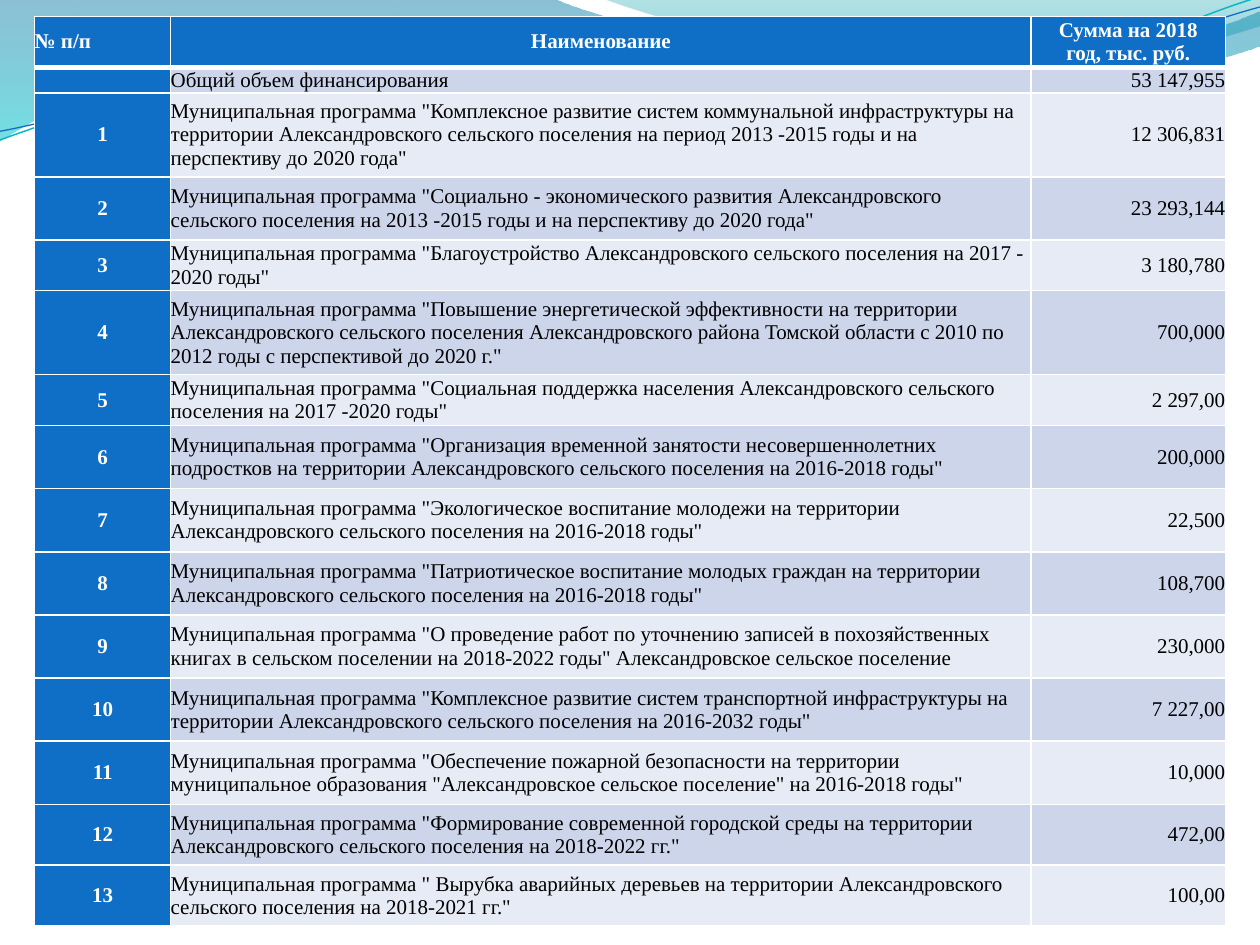
"""Build the slide with the table of municipal programme funding for 2018."""
from lxml import etree
from pptx import Presentation
from pptx.dml.color import RGBColor
from pptx.enum.text import MSO_ANCHOR, PP_ALIGN
from pptx.oxml.ns import qn
from pptx.util import Pt

LEFT, CENTER, RIGHT = PP_ALIGN.LEFT, PP_ALIGN.CENTER, PP_ALIGN.RIGHT
MIDDLE = MSO_ANCHOR.MIDDLE

WHITE = RGBColor(0xFF, 0xFF, 0xFF)
BLACK = RGBColor(0x00, 0x00, 0x00)
BLUE = RGBColor(0x0F, 0x6F, 0xC6)
TEAL = RGBColor(0x0A, 0xB8, 0xBF)
BANDS = (RGBColor(0xCC, 0xD5, 0xEA), RGBColor(0xE7, 0xEB, 0xF5))
DEEP_BLUE = RGBColor(0x00, 0x74, 0xA1)
AQUA = RGBColor(0x00, 0xC6, 0xCF)
DEEP_TEAL = RGBColor(0x00, 0xA1, 0xA9)
SKY_BLUE = RGBColor(0x00, 0x8B, 0xBF)

WIDE_WAVE = [
    (0, 0), (317, -0.7),
    (343, 12, 478, 45, 546, 45), (614, 45, 690, 19, 720, 6.5),
    (721, 26),
    (708, 32, 626, 55, 537, 54), (448, 54, 275, 20, 185, 24.5),
    (93, 26, 33, 60, -0.7, 81),
]
RIGHT_WAVE = [
    (345, -0.7),
    (366, 8, 491, 45, 554, 47), (616, 50, 692, 23, 720, 15),
    (720, 0),
]
TEAL_CURVE = [
    (0, 80),
    (35, 67, 114, 41, 199, 37.5), (284, 34, 427, 64, 513, 57.5),
    (600, 51, 675, 11, 719, -1.5),
]
BLUE_CURVE = [
    (0, 75),
    (34, 69, 118, 44, 204, 40), (290, 37, 430, 60.5, 516, 54),
    (602, 48, 678, 15, 720, 4),
]

COLUMN_WIDTHS = [77.75, 491.75, 110.9]
ROW_HEIGHTS = [29, 14.2, 48, 36.1, 29, 48, 29] + [36.1] * 6 + [34.8] * 2
HEADER = ["№ п/п", "Наименование", "Сумма на 2018\nгод, тыс. руб."]
TOTAL = ["", "Общий объем финансирования", "53 147,955"]
PREFIX = 'Муниципальная программа "'
NO_BREAK_SPACE = chr(160)
PROGRAMMES = [
    ('Комплексное развитие систем коммунальной инфраструктуры на территории '
     'Александровского сельского поселения на период 2013 -2015 годы и на '
     'перспективу до 2020 года"', "12 306,831"),
    ('Социально - экономического развития Александровского сельского поселения '
     'на 2013 -2015 годы и на перспективу до 2020 года"',
     f"23{NO_BREAK_SPACE}293,144"),
    ('Благоустройство Александровского сельского поселения на 2017 - 2020 годы"',
     f"3{NO_BREAK_SPACE}180,780"),
    ('Повышение энергетической эффективности на территории Александровского '
     'сельского поселения Александровского района Томской области с 2010 по '
     '2012 годы с перспективой до 2020 г."', "700,000"),
    ('Социальная поддержка населения Александровского сельского поселения '
     'на 2017 -2020 годы"', f"2{NO_BREAK_SPACE}297,00"),
    ('Организация временной занятости несовершеннолетних подростков на '
     'территории Александровского сельского поселения на 2016-2018 годы"',
     "200,000"),
    ('Экологическое воспитание молодежи на территории Александровского '
     'сельского поселения на 2016-2018 годы"', "22,500"),
    ('Патриотическое воспитание молодых граждан на территории '
     'Александровского сельского поселения на 2016-2018 годы"', "108,700"),
    ('О проведение работ по уточнению записей в похозяйственных книгах в '
     'сельском поселении на 2018-2022 годы" Александровское сельское поселение',
     "230,000"),
    ('Комплексное развитие систем транспортной инфраструктуры на территории '
     'Александровского сельского поселения на 2016-2032 годы"',
     f"7{NO_BREAK_SPACE}227,00"),
    ('Обеспечение пожарной безопасности на территории муниципальное '
     'образования "Александровское сельское поселение" на 2016-2018 годы"',
     "10,000"),
    ('Формирование современной городской среды на территории '
     'Александровского сельского поселения на 2018-2022 гг."', "472,00"),
    (' Вырубка аварийных деревьев на территории Александровского сельского '
     'поселения на 2018-2021 гг."', "100,00"),
]


class SlideBuilder:
    """Hold the text style and the current slide."""

    font_name = "Times New Roman"
    font_size = Pt(12)

    def __init__(self, slide):
        """Keep the slide to draw on."""
        self.slide = slide

    def outline(self, segments, close):
        """Add a freeform of straight lines and cubic curves."""
        anchors = [(Pt(segment[-2]), Pt(segment[-1])) for segment in segments]
        builder = self.slide.shapes.build_freeform(*anchors[0])
        builder.add_line_segments(anchors[1:], close=close)
        shape = builder.convert_to_shape()
        shape.shadow.inherit = False
        lines = list(shape.element.spPr.iter(qn("a:lnTo")))
        for line, segment in zip(lines, segments[1:]):
            if len(segment) == 2:
                continue
            curve = etree.Element(qn("a:cubicBezTo"))
            for x, y in zip(segment[::2], segment[1::2]):
                etree.SubElement(curve, qn("a:pt"), x=str(Pt(x) - shape.left),
                                 y=str(Pt(y) - shape.top))
            line.getparent().replace(line, curve)
        return shape

    def wave(self, segments, stops):
        """Add a closed wave with a translucent gradient from top to bottom."""
        shape = self.outline(segments, True)
        shape.line.fill.background()
        shape.fill.gradient()
        shape.fill.gradient_angle = 270
        for stop, (position, color, _) in zip(shape.fill.gradient_stops, stops):
            stop.position = position
            stop.color.rgb = color
        colors = shape.element.spPr.iter(qn("a:srgbClr"))
        for element, (_, _, opacity) in zip(colors, stops):
            etree.SubElement(element, qn("a:alpha"), val=str(opacity * 1000))

    def curve(self, segments, color, width):
        """Add an open curved line."""
        shape = self.outline(segments, False)
        shape.fill.background()
        shape.line.color.rgb = color
        shape.line.width = Pt(width)

    def borders(self, cell, widths):
        """Give a cell white borders: left, right, top and bottom."""
        properties = cell._tc.get_or_add_tcPr()
        for side, width in zip("LRTB", widths):
            line = etree.SubElement(properties, qn(f"a:ln{side}"), w=str(Pt(width)))
            solid = etree.SubElement(line, qn("a:solidFill"))
            etree.SubElement(solid, qn("a:srgbClr"), val=str(WHITE))

    def cell(self, cell, text, fill, color, bold, alignment):
        """Fill one table cell with text and colour."""
        cell.margin_left = cell.margin_right = cell.margin_top = cell.margin_bottom = 0
        cell.vertical_anchor = MIDDLE
        cell.fill.solid()
        cell.fill.fore_color.rgb = fill
        for index, content in enumerate(text.split("\n")):
            frame = cell.text_frame
            paragraph = frame.add_paragraph() if index else frame.paragraphs[0]
            paragraph.alignment = alignment
            if not content:
                etree.SubElement(paragraph._p, qn("a:endParaRPr"), sz="1200")
                continue
            run = paragraph.add_run()
            run.text = content
            run.font.name = self.font_name
            run.font.size = self.font_size
            run.font.bold = bold
            run.font.color.rgb = color

    def table(self, left, top, rows):
        """Add the table with a blue header row and a blue first column."""
        table = self.slide.shapes.add_table(
            len(rows), len(COLUMN_WIDTHS), Pt(left), Pt(top),
            Pt(sum(COLUMN_WIDTHS)), Pt(sum(ROW_HEIGHTS))).table
        table.first_col = True
        for column, width in zip(table.columns, COLUMN_WIDTHS):
            column.width = Pt(width)
        for row, height in zip(table.rows, ROW_HEIGHTS):
            row.height = Pt(height)
        for column, text in enumerate(rows[0]):
            self.borders(table.cell(0, column), (1, 1, 1, 3))
            self.cell(table.cell(0, column), text, BLUE, WHITE, True,
                      CENTER if column else LEFT)
        for index, (number, name, amount) in enumerate(rows[1:], 1):
            band = BANDS[(index - 1) % 2]
            self.cell(table.cell(index, 0), number, BLUE, WHITE, True, CENTER)
            self.cell(table.cell(index, 1), name, band, BLACK, False, LEFT)
            self.cell(table.cell(index, 2), amount, band, BLACK, False, RIGHT)


def main():
    """Build and save the presentation."""
    presentation = Presentation()
    presentation.slide_width, presentation.slide_height = Pt(720), Pt(540)
    builder = SlideBuilder(presentation.slides.add_slide(presentation.slide_layouts[6]))
    builder.wave(WIDE_WAVE, [(0, DEEP_BLUE, 45), (1, AQUA, 55)])
    builder.wave(RIGHT_WAVE, [(0, DEEP_TEAL, 30), (0.8, SKY_BLUE, 45)])
    builder.curve(TEAL_CURVE, TEAL, 0.85)
    builder.curve(BLUE_CURVE, BLUE, 0.75)
    programmes = [(str(number), PREFIX + name, amount)
                  for number, (name, amount) in enumerate(PROGRAMMES, 1)]
    builder.table(19.8, 9.4, [HEADER, TOTAL, *programmes])
    presentation.save("out.pptx")


if __name__ == "__main__":
    main()
